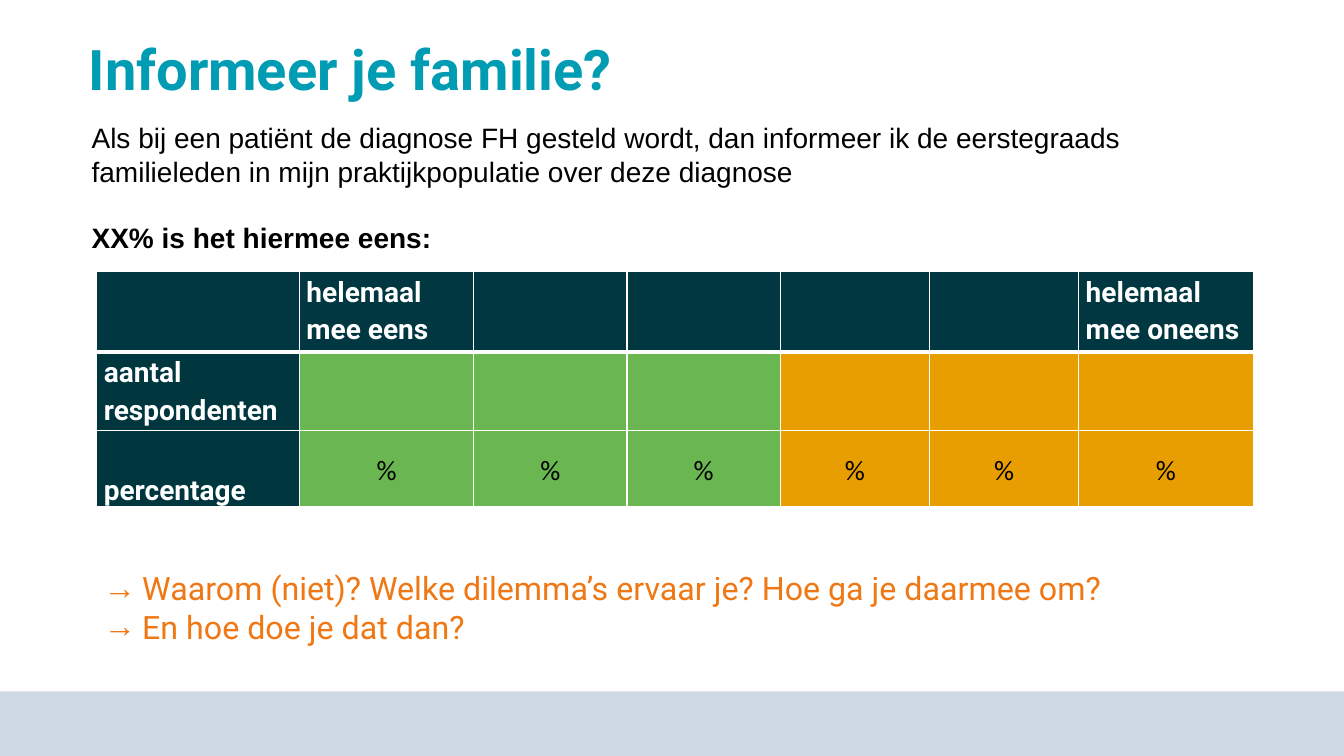
from lxml.etree import SubElement
from pptx import Presentation
from pptx.dml.color import RGBColor
from pptx.enum.shapes import MSO_SHAPE
from pptx.enum.text import MSO_ANCHOR, MSO_AUTO_SIZE, PP_ALIGN
from pptx.oxml.ns import qn
from pptx.util import Inches, Pt

TEAL = RGBColor(0x00, 0x9C, 0xB4)
ORANGE = RGBColor(0xF0, 0x78, 0x14)
BAND = RGBColor(0xCE, 0xD9, 0xE5)
HEADER = RGBColor(0x00, 0x37, 0x41)
LABEL = RGBColor(0x00, 0x37, 0x3E)
AGREE = RGBColor(0x6A, 0xB6, 0x50)
DISAGREE = RGBColor(0xE8, 0x9E, 0x00)
WHITE = RGBColor(0xFF, 0xFF, 0xFF)
BLACK = RGBColor(0x00, 0x00, 0x00)

COL_WIDTHS = [2.01, 1.73, 1.52, 1.52, 1.48, 1.48, 1.73]
ROW_HEIGHTS = [0.8, 0.78, 0.76]
ROWS = [
    ["", "helemaal mee eens", "", "", "", "", "helemaal mee oneens"],
    ["aantal\nrespondenten"] + [""] * 6,
    ["percentage"] + ["%"] * 6,
]
QUESTIONS = [
    "Waarom (niet)? Welke dilemma’s ervaar je? Hoe ga je daarmee om?",
    "En hoe doe je dat dan?",
]


def set_font(p, name, size, color, bold=False):
    for key, value in {"name": name, "size": Pt(size), "bold": bold}.items():
        setattr(p.font, key, value)
    p.font.color.rgb = color


def place(s, left, top, width, height):
    box = {"left": left, "top": top, "width": width, "height": height}
    for key, value in box.items():
        setattr(s, key, Inches(value))


def add_band(slide):
    s = slide.shapes.add_shape(MSO_SHAPE.RECTANGLE, 0, Inches(6.86),
                               Inches(13.33), Inches(0.64))
    s.shadow.inherit = False
    s.fill.solid()
    s.fill.fore_color.rgb = BAND
    s.line.fill.background()


def fill_title(slide):
    s = slide.shapes.title
    place(s, 0.78, 0.36, 10.68, 0.71)
    tf = s.text_frame
    tf.text = "Informeer je familie?"
    tf.auto_size = MSO_AUTO_SIZE.NONE
    tf.vertical_anchor = MSO_ANCHOR.MIDDLE
    p = tf.paragraphs[0]
    p.alignment = PP_ALIGN.LEFT
    p.line_spacing = 0.9
    set_font(p, "Roboto", 40, TEAL, True)


def add_statement(slide):
    s = slide.shapes.add_textbox(Inches(0.81), Inches(1.15),
                                 Inches(10.95), Inches(1.45))
    tf = s.text_frame
    tf.word_wrap = True
    tf.text = ("Als bij een patiënt de diagnose FH gesteld wordt, dan informeer "
               "ik de eerstegraads familieleden in mijn praktijkpopulatie over "
               "deze diagnose\nXX% is het hiermee eens:")
    statement, result = tf.paragraphs
    set_font(statement, "Arial", 20, BLACK)
    set_font(result, "Arial", 20, BLACK, True)
    result.space_before = Pt(23)


def set_borders(cell, bottom):
    tc_pr = cell._tc.get_or_add_tcPr()
    for side, width in {"L": 1, "R": 1, "T": 1, "B": bottom}.items():
        ln = SubElement(tc_pr, qn(f"a:ln{side}"), w=str(Pt(width)))
        SubElement(SubElement(ln, qn("a:solidFill")), qn("a:srgbClr"),
                   val=str(WHITE))


def cell_color(row, col):
    if row == 0:
        return HEADER
    if col == 0:
        return LABEL
    return AGREE if col <= 3 else DISAGREE


def format_cell(cell, row, col):
    # The header's heavy rule is also the top edge of the next row.
    set_borders(cell, 3 if row == 0 else 1)
    cell.fill.solid()
    cell.fill.fore_color.rgb = cell_color(row, col)
    cell.margin_left = cell.margin_right = Inches(0.07)
    cell.margin_top = cell.margin_bottom = 0
    cell.text = ROWS[row][col]
    is_value = row > 0 and col > 0
    if is_value:
        cell.vertical_anchor = MSO_ANCHOR.MIDDLE
    elif row == 2:
        cell.vertical_anchor = MSO_ANCHOR.BOTTOM
    for p in cell.text_frame.paragraphs:
        p.line_spacing = 1.15
        if is_value:
            p.alignment = PP_ALIGN.CENTER
            set_font(p, "Calibri", 20, BLACK)
        else:
            set_font(p, "Roboto", 20, WHITE, True)


def add_result_table(slide):
    frame = slide.shapes.add_table(
        len(ROWS), len(COL_WIDTHS), Inches(0.96), Inches(2.69),
        Inches(sum(COL_WIDTHS)), Inches(sum(ROW_HEIGHTS)))
    table = frame.table
    table.horz_banding = False
    for column, width in zip(table.columns, COL_WIDTHS):
        column.width = Inches(width)
    for r, height in enumerate(ROW_HEIGHTS):
        table.rows[r].height = Inches(height)
        for c in range(len(COL_WIDTHS)):
            format_cell(table.cell(r, c), r, c)


def fill_questions(slide):
    s = slide.placeholders[1]
    place(s, 0.93, 5.59, 11.02, 0.88)
    tf = s.text_frame
    tf.text = "\n".join(QUESTIONS)
    tf.auto_size = MSO_AUTO_SIZE.NONE
    for p in tf.paragraphs:
        p_pr = p._p.get_or_add_pPr()
        p_pr.set("marL", str(Inches(0.38)))
        p_pr.set("indent", str(Inches(-0.38)))
        SubElement(p_pr, qn("a:buChar"), char="→")
        p.space_before = Pt(0)
        set_font(p, "Roboto", 23, ORANGE)


def main():
    prs = Presentation()
    prs.slide_width = Inches(13.33)
    prs.slide_height = Inches(7.5)
    slide = prs.slides.add_slide(prs.slide_layouts[1])
    add_band(slide)
    fill_title(slide)
    add_statement(slide)
    add_result_table(slide)
    fill_questions(slide)
    prs.save("out.pptx")


if __name__ == "__main__":
    main()
